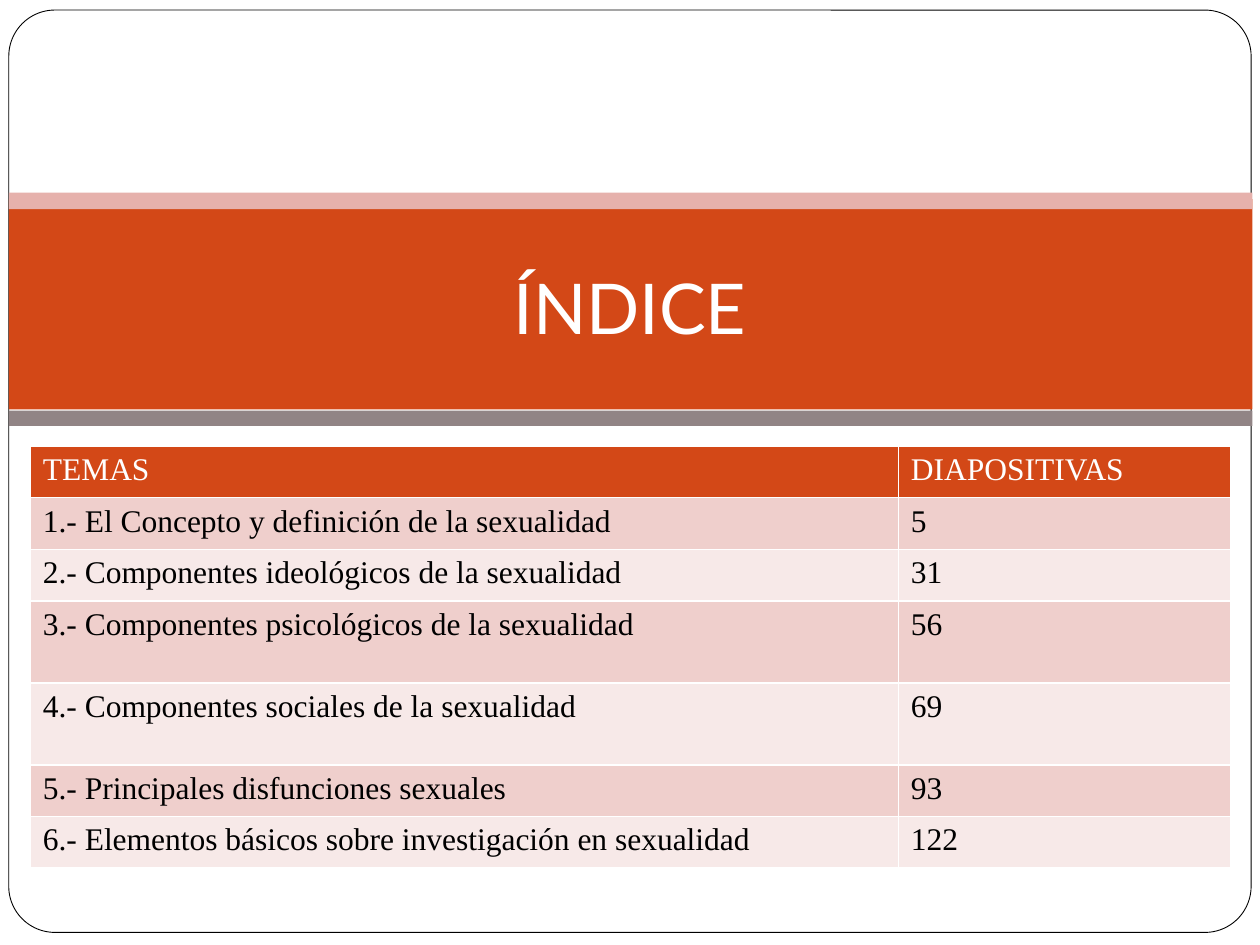
import pptx
import pptx.dml.color
import pptx.enum.shapes
import pptx.enum.text
import pptx.oxml
import pptx.oxml.ns
import pptx.util

Inches = pptx.util.Inches
Pt = pptx.util.Pt
RGBColor = pptx.dml.color.RGBColor
Shape = pptx.enum.shapes.MSO_SHAPE

WHITE = RGBColor(0xFF, 0xFF, 0xFF)
BLACK = RGBColor(0x00, 0x00, 0x00)
ORANGE = RGBColor(0xD3, 0x48, 0x17)
PINK = RGBColor(0xE6, 0xB1, 0xAC)
GREY = RGBColor(0x91, 0x84, 0x85)
ROW_TINTS = (RGBColor(0xEF, 0xCF, 0xCC), RGBColor(0xF7, 0xE9, 0xE8))

SLIDE_WIDTH, SLIDE_HEIGHT = 10, 7.5
MARGIN = 0.07
BAND_WIDTH = SLIDE_WIDTH - 2 * MARGIN + 0.01
COLUMN_WIDTHS = (6.89, 2.64)
ROW_HEIGHT, TALL_ROW_HEIGHT = 0.41, 0.65
TALL_ROWS = (3, 4)

INDEX = (
    ("TEMAS", "DIAPOSITIVAS"),
    ("1.- El Concepto y definición de la sexualidad", "5"),
    ("2.- Componentes ideológicos de la sexualidad", "31"),
    ("3.- Componentes psicológicos de la sexualidad", "56"),
    ("4.- Componentes sociales de la sexualidad", "69"),
    ("5.- Principales disfunciones sexuales", "93"),
    ("6.- Elementos básicos sobre investigación en sexualidad", "122"),
)


def format_font(font, name, size, color):
    for attribute, value in {"name": name, "size": Pt(size), "bold": False}.items():
        setattr(font, attribute, value)
    font.color.rgb = color


def add_panel(slide, kind, left, top, width, height, fill):
    panel = slide.shapes.add_shape(kind, *map(Inches, (left, top, width, height)))
    panel.shadow.inherit = False
    panel.fill.solid()
    panel.fill.fore_color.rgb = fill
    panel.line.fill.background()
    return panel


def add_frame(slide):
    frame = add_panel(slide, Shape.ROUNDED_RECTANGLE, MARGIN, 0.08,
                      SLIDE_WIDTH - 2 * MARGIN, 7.32, WHITE)
    frame.adjustments[0] = 0.05
    frame.line.color.rgb = BLACK
    frame.line.width = Pt(0.5)


def add_bands(slide):
    for top, height, fill in ((1.58, 1.67, ORANGE), (1.53, 0.13, PINK), (3.26, 0.12, GREY)):
        add_panel(slide, Shape.RECTANGLE, MARGIN, top, BAND_WIDTH, height, fill)


def set_title(slide, text):
    """Place the title over the bands, in front of them."""
    title = slide.shapes.title
    box = {"left": 0.5, "top": 1.65, "width": SLIDE_WIDTH - 1, "height": 1.61}
    for attribute, value in box.items():
        setattr(title, attribute, Inches(value))
    frame = title.text_frame
    frame.text = text
    layout = {"vertical_anchor": pptx.enum.text.MSO_ANCHOR.MIDDLE,
              "margin_bottom": Inches(0.1), "word_wrap": True}
    for attribute, value in layout.items():
        setattr(frame, attribute, value)
    paragraph = frame.paragraphs[0]
    paragraph.alignment = pptx.enum.text.PP_ALIGN.CENTER
    format_font(paragraph.runs[0].font, "Lato", 40, WHITE)
    title.element.getparent().append(title.element)


def set_borders(cell, color, width):
    properties = cell._tc.get_or_add_tcPr()
    for side in ("lnL", "lnR", "lnT", "lnB"):
        properties.append(pptx.oxml.parse_xml(
            f'<a:{side} {pptx.oxml.ns.nsdecls("a")} w="{Pt(width)}">'
            f'<a:solidFill><a:srgbClr val="{color}"/></a:solidFill></a:{side}>'))


def fill_cell(cell, text, fill, color):
    set_borders(cell, WHITE, 1)
    cell.fill.solid()
    cell.fill.fore_color.rgb = fill
    cell.text = text
    format_font(cell.text_frame.paragraphs[0].runs[0].font, "Times New Roman", 18, color)


def add_index_table(slide):
    heights = [TALL_ROW_HEIGHT if row in TALL_ROWS else ROW_HEIGHT
               for row in range(len(INDEX))]
    table = slide.shapes.add_table(
        len(INDEX), len(COLUMN_WIDTHS), Inches(0.24), Inches(3.54),
        Inches(sum(COLUMN_WIDTHS)), Inches(sum(heights))).table
    table.horz_banding = False
    for column, width in zip(table.columns, COLUMN_WIDTHS):
        column.width = Inches(width)
    for number, (row, height, texts) in enumerate(zip(table.rows, heights, INDEX)):
        row.height = Inches(height)
        fill, color = (ROW_TINTS[(number - 1) % 2], BLACK) if number else (ORANGE, WHITE)
        for cell, text in zip(row.cells, texts):
            fill_cell(cell, text, fill, color)


def main():
    presentation = pptx.Presentation()
    presentation.slide_width = Inches(SLIDE_WIDTH)
    presentation.slide_height = Inches(SLIDE_HEIGHT)
    slide = presentation.slides.add_slide(presentation.slide_layouts.get_by_name("Title Only"))
    add_frame(slide)
    add_bands(slide)
    set_title(slide, "ÍNDICE")
    add_index_table(slide)
    presentation.save("out.pptx")


if __name__ == "__main__":
    main()
